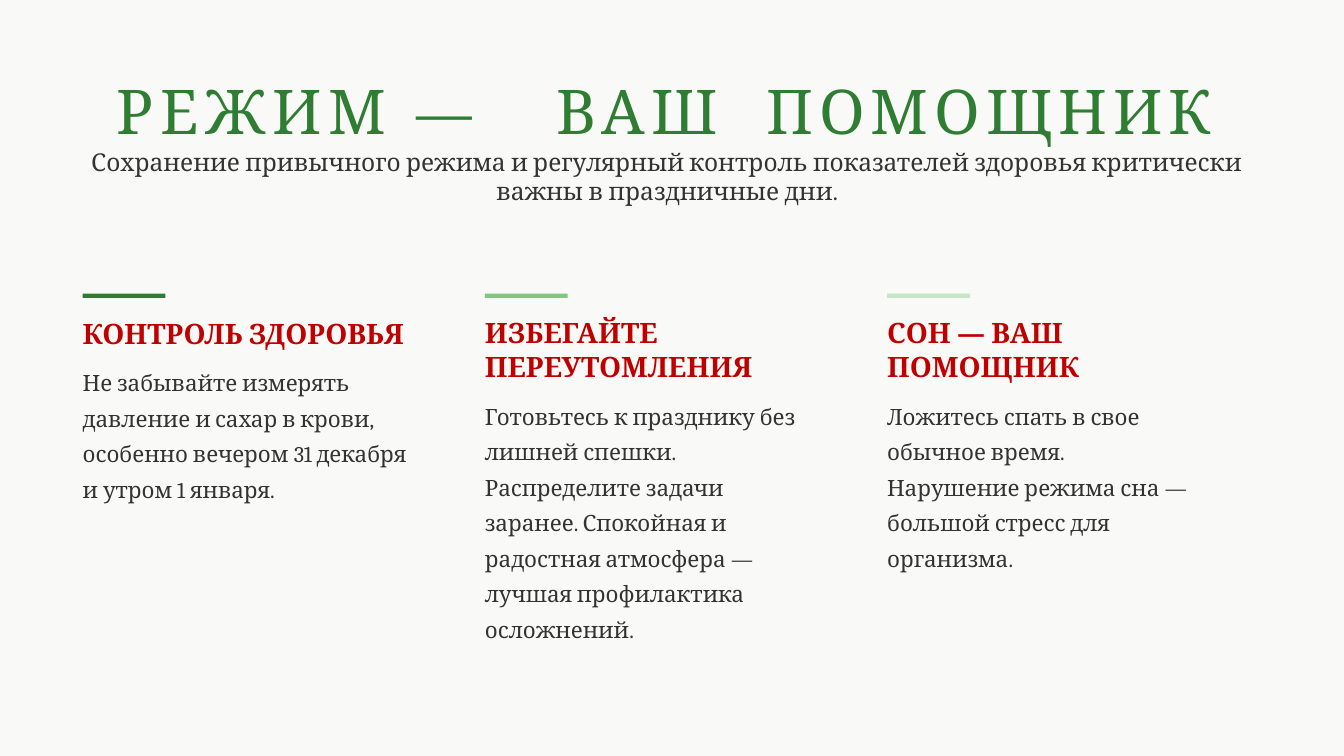
from pptx import Presentation
from pptx.dml.color import RGBColor
from pptx.enum.shapes import MSO_SHAPE
from pptx.enum.text import MSO_ANCHOR, MSO_AUTO_SIZE, PP_ALIGN
from pptx.util import Pt

FONT = "Cambria"
COLORS = {
    "paper": "F9FAF7",
    "title": "2E7D32",
    "heading": "C00000",
    "text": "333333",
    "bar1": "2E7D32",
    "bar2": "81C783",
    "bar3": "C7E6C8",
}

TITLE = [("РЕЖИМ ", 4.8), ("— ", 24), ("ВАШ", 4.6), (" ", 20), ("ПОМОЩНИК", 4.2)]
SUBTITLE = ("Сохранение привычного режима и регулярный контроль показателей "
            "здоровья критически важны в праздничные дни.")

COLUMNS = [
    ("bar1", 237, 134, "КОНТРОЛЬ ЗДОРОВЬЯ", [
        ("Не забывайте измерять давление ", 0), ("и ", -0.5),
        ("сахар в крови, особенно вечером ", 0), ("31 ", -0.2),
        ("декабря и утром 1 января.", 0)]),
    ("bar2", 237, 235, "ИЗБЕГАЙТЕ ПЕРЕУТОМЛЕНИЯ", [
        ("Готовьтесь к празднику без лишней спешки. Распределите задачи "
         "заранее. Спокойная и радостная атмосфера — лучшая профилактика "
         "осложнений.", 0)]),
    ("bar3", 221, 184, "СОН — ВАШ ПОМОЩНИК", [
        ("Ложитесь спать в свое обычное время. Нарушение режима сна ", 0),
        ("— ", -0.5), ("большой стресс для организма.", 0)]),
]


def rgb(name):
    """Return the named colour."""
    return RGBColor.from_string(COLORS[name])


def add_run(p, text, size, color, bold=False, spacing=0):
    """Append one formatted run to a paragraph."""
    r = p.add_run()
    r.text = text
    r.font.name = FONT
    r.font.size = Pt(size)
    r.font.bold = bold
    r.font.color.rgb = rgb(color)
    if spacing:
        r.font._element.set("spc", str(round(spacing * 100)))


def set_frame(tf, top):
    """Set the insets, wrapping and anchor of a text frame."""
    tf.word_wrap = True
    tf.auto_size = MSO_AUTO_SIZE.SHAPE_TO_FIT_TEXT
    tf.vertical_anchor = MSO_ANCHOR.TOP
    tf.margin_left, tf.margin_top = Pt(1), Pt(top)
    tf.margin_right = tf.margin_bottom = 0


def add_header(s, x, y, w, h):
    """Fill the title placeholder with the title and its subtitle."""
    sp = s.shapes.title
    sp.left, sp.top, sp.width, sp.height = Pt(x), Pt(y), Pt(w), Pt(h)
    set_frame(sp.text_frame, 26.6)
    p = sp.text_frame.paragraphs[0]
    p.alignment = PP_ALIGN.CENTER
    p.space_before = Pt(26.9)
    for text, spacing in TITLE:
        add_run(p, text, 44, "title", spacing=spacing)
    p.add_line_break()
    add_run(p, SUBTITLE, 17.5, "text")


def add_column(s, x, y, w, h, bar, heading, body):
    """Draw a colour bar with a heading and body text below it."""
    sp = s.shapes.add_shape(MSO_SHAPE.RECTANGLE, Pt(x + 1), Pt(y), Pt(59), Pt(3))
    sp.shadow.inherit = False
    sp.fill.solid()
    sp.fill.fore_color.rgb = rgb(bar)
    sp.line.fill.background()

    tf = s.shapes.add_textbox(Pt(x), Pt(y + 14.5), Pt(w), Pt(h)).text_frame
    set_frame(tf, 1.4)
    p = tf.paragraphs[0]
    p.space_before = Pt(1.1)
    add_run(p, heading, 20, "heading", bold=True)
    p = tf.add_paragraph()
    p.space_before = Pt(8)
    p.line_spacing = 1.32
    for text, spacing in body:
        add_run(p, text, 16, "text", spacing=spacing)


def main():
    """Build the slide and save it."""
    prs = Presentation()
    prs.slide_width, prs.slide_height = Pt(959), Pt(539.3)
    s = prs.slides.add_slide(prs.slide_layouts[5])
    s.background.fill.solid()
    s.background.fill.fore_color.rgb = rgb("paper")
    add_header(s, 57.6, 25.2, 836, 123)
    for i, (bar, w, h, heading, body) in enumerate(COLUMNS):
        add_column(s, 58 + i * 287, 209.5, w, h, bar, heading, body)
    prs.save("out.pptx")


if __name__ == "__main__":
    main()
